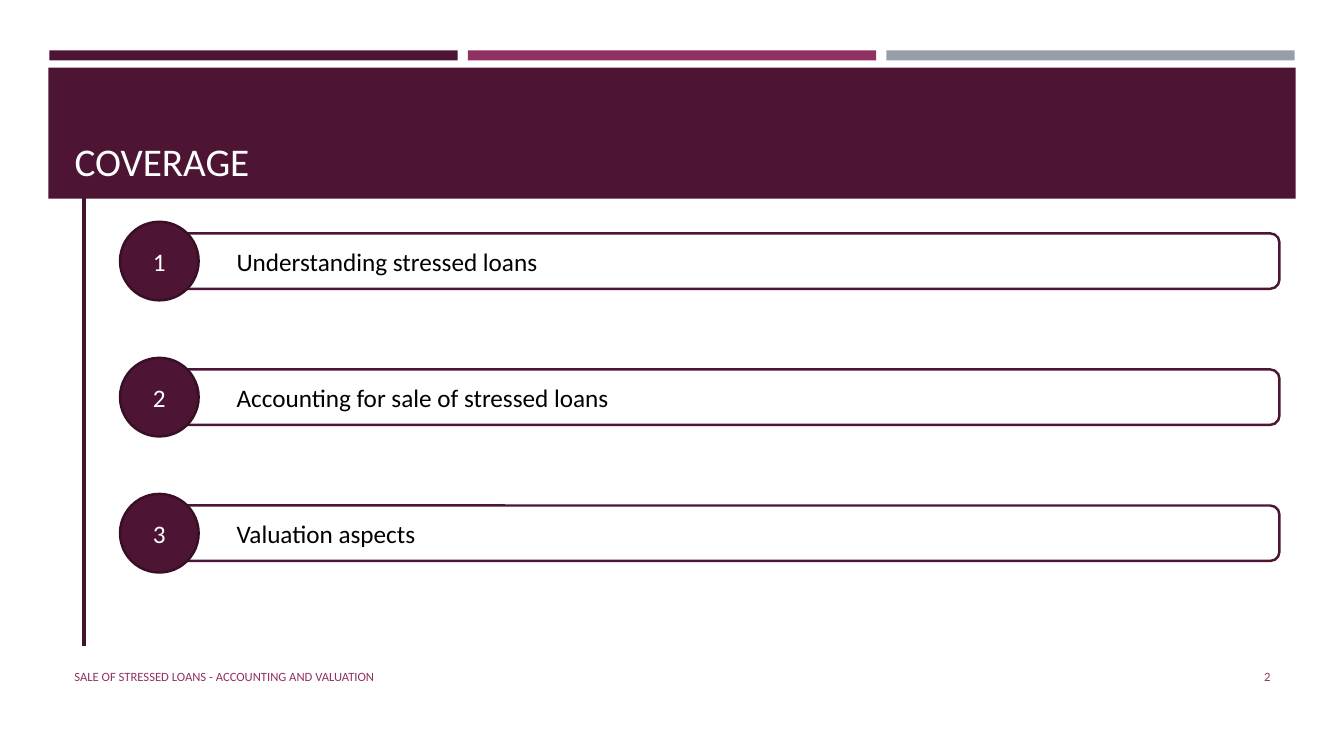
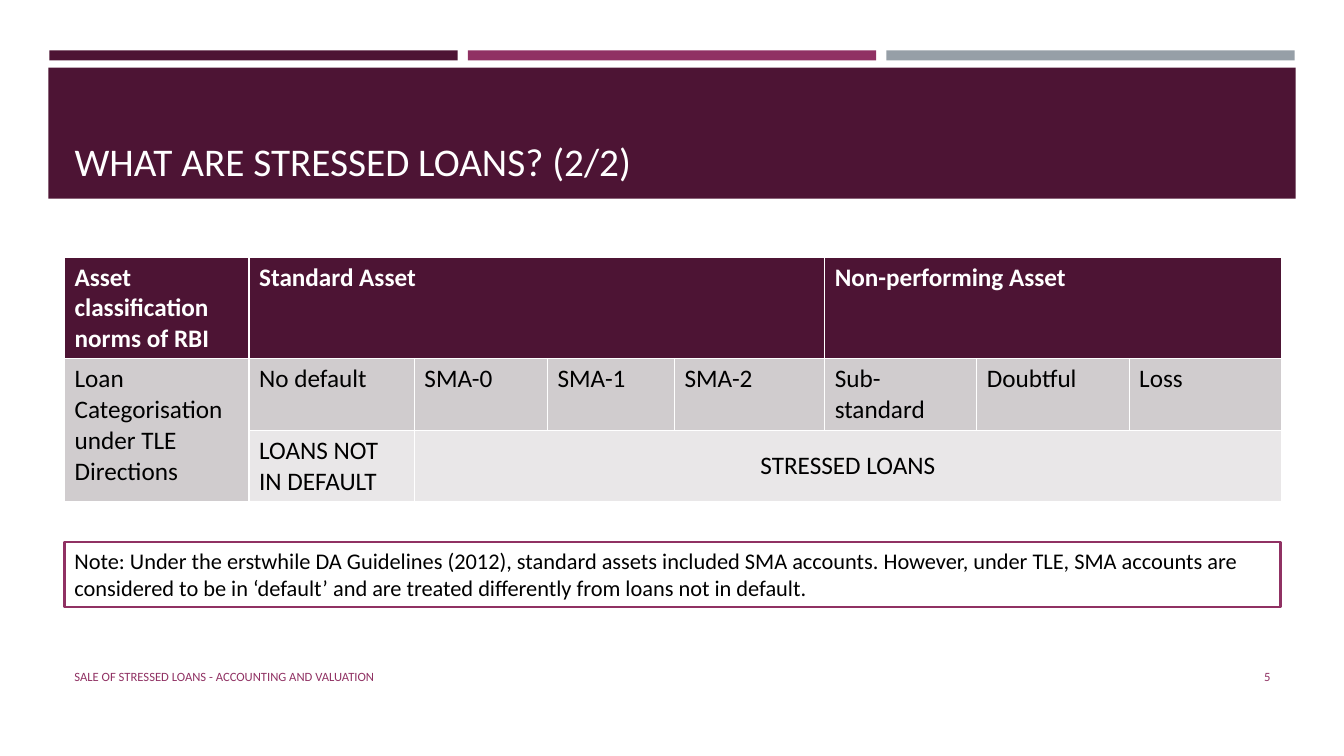
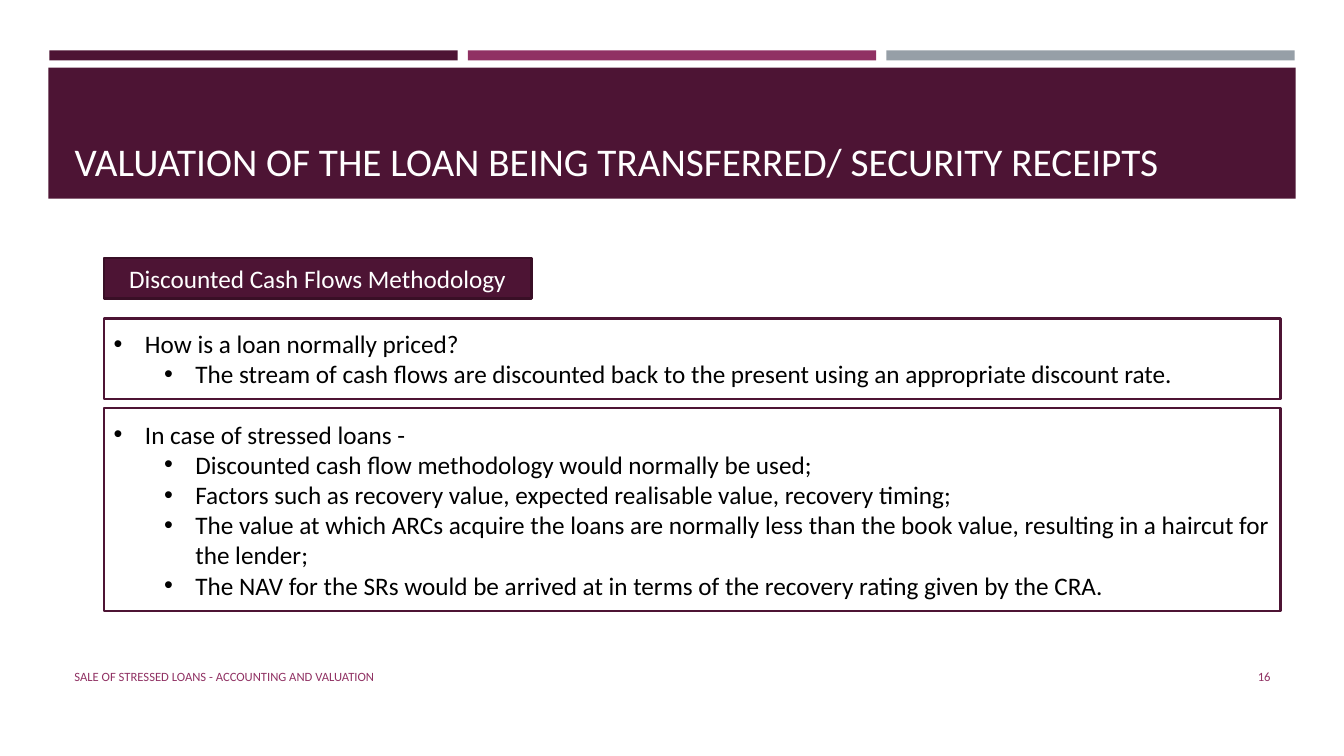
from lxml import etree
from pptx import Presentation
from pptx.dml.color import RGBColor
from pptx.enum import shapes, text
from pptx.oxml import ns
from pptx.util import Inches, Pt

# Colours and font
PLUM = RGBColor(0x4D, 0x14, 0x34)
EDGE = RGBColor(0x39, 0x0F, 0x26)
RAIL = RGBColor(0x45, 0x12, 0x2F)
ROSE = RGBColor(0x90, 0x31, 0x63)
GREY = RGBColor(0x96, 0x9F, 0xA7)
MID = RGBColor(0xD0, 0xCC, 0xCE)
PALE = RGBColor(0xE9, 0xE7, 0xE8)
WHITE = RGBColor(255, 255, 255)
BLACK = RGBColor(0, 0, 0)
FONT = "Calibri"

# Shared geometry, in inches
LEFT, WIDE = 0.64, 12.06
RIGHT = LEFT + WIDE

# Content
FOOT = "SALE OF STRESSED LOANS - ACCOUNTING AND VALUATION"
TOPICS = ["Understanding stressed loans",
          "Accounting for sale of stressed loans",
          "Valuation aspects"]
COLS = [1.83, 1.64, 1.32, 1.26, 1.49, 1.51, 1.51, 1.51]
ROWS = [1.01, 0.71, 0.71]
# row, column, rows spanned, columns spanned, text
CELLS = [
    (0, 0, 1, 1, "Asset classification norms of RBI"),
    (0, 1, 1, 4, "Standard Asset"),
    (0, 5, 1, 3, "Non-performing Asset"),
    (1, 0, 2, 1, "Loan Categorisation under TLE Directions"),
    (1, 1, 1, 1, "No default"),
    (1, 2, 1, 1, "SMA-0"),
    (1, 3, 1, 1, "SMA-1"),
    (1, 4, 1, 1, "SMA-2"),
    (1, 5, 1, 1, "Sub-standard"),
    (1, 6, 1, 1, "Doubtful"),
    (1, 7, 1, 1, "Loss"),
    (2, 1, 1, 1, "LOANS NOT IN DEFAULT"),
    (2, 2, 1, 6, "STRESSED LOANS"),
]
NOTE = ("Note: Under the erstwhile DA Guidelines (2012), standard assets "
        "included SMA accounts. However, under TLE, SMA accounts are "
        "considered to be in ‘default’ and are treated differently from "
        "loans not in default.")
METHOD = "Discounted Cash Flows Methodology"
# top, height, lead line, sub-points
PANELS = [
    (3.16, 0.8, "How is a loan normally priced?",
     ["The stream of cash flows are discounted back to the present using "
      "an appropriate discount rate."]),
    (4.05, 2.01, "In case of stressed loans -",
     ["Discounted cash flow methodology would normally be used;",
      "Factors such as recovery value, expected realisable value, recovery "
      "timing;",
      "The value at which ARCs acquire the loans are normally less than the "
      "book value, resulting in a haircut for the lender;",
      "The NAV for the SRs would be arrived at in terms of the recovery "
      "rating given by the CRA."]),
]

ALIGN = {"l": text.PP_ALIGN.LEFT, "c": text.PP_ALIGN.CENTER,
         "r": text.PP_ALIGN.RIGHT}
ANCHOR = {"t": text.MSO_ANCHOR.TOP, "m": text.MSO_ANCHOR.MIDDLE,
          "b": text.MSO_ANCHOR.BOTTOM}


def write(frame, lines, size=18, color=BLACK, align="l", anchor="m",
          bold=False):
    """Fill a text frame, one paragraph per line."""
    frame.word_wrap = True
    frame.vertical_anchor = ANCHOR[anchor]
    look = {"name": FONT, "size": Pt(size), "bold": bold}
    for i, line in enumerate(lines):
        para = frame.paragraphs[0] if i == 0 else frame.add_paragraph()
        para.alignment = ALIGN[align]
        run = para.add_run()
        run.text = line
        for key, val in look.items():
            setattr(run.font, key, val)
        run.font.color.rgb = color


def box(slide, at, fill, line=None, kind="RECTANGLE"):
    shape = slide.shapes.add_shape(getattr(shapes.MSO_SHAPE, kind),
                                   *map(Inches, at))
    shape.shadow.inherit = False
    shape.fill.solid()
    shape.fill.fore_color.rgb = fill
    if line is None:
        shape.line.fill.background()
    else:
        shape.line.color.rgb = line
        shape.line.width = Pt(1.75)
    return shape


def label(slide, at, words, **look):
    frame = slide.shapes.add_textbox(*map(Inches, at)).text_frame
    write(frame, [words], **look)


def bullet(para, left):
    props = para._p.get_or_add_pPr()
    props.set("marL", str(Inches(left)))
    props.set("indent", str(-Inches(0.31)))
    etree.SubElement(props, ns.qn("a:buFont"), typeface="Arial")
    etree.SubElement(props, ns.qn("a:buChar"), char="•")


def bands(slide, layout):
    """Draw the top bands once and hand them to the layout."""
    parts = [box(slide, (0.48, 0.67, 12.37, 1.3), PLUM)]
    for i, color in enumerate([PLUM, ROSE, GREY]):
        parts.append(box(slide, (0.49 + 4.15 * i, 0.5, 4.05, 0.1), color))
    for i, part in enumerate(parts):
        layout.shapes._spTree.insert(2 + i, part._element)


def start(deck, title, page):
    slide = deck.slides.add_slide(deck.slide_layouts[5])
    head = slide.shapes.title
    spot = {"left": LEFT, "top": 0.77, "width": WIDE, "height": 1.11}
    for key, val in spot.items():
        setattr(head, key, Inches(val))
    write(head.text_frame, [title], size=28, color=WHITE, anchor="b")
    head.text_frame.auto_size = text.MSO_AUTO_SIZE.NONE
    label(slide, (LEFT, 6.51, 7.56, 0.4), FOOT, size=9, color=ROSE)
    label(slide, (RIGHT - 1.15, 6.51, 1.15, 0.4), str(page), size=9,
          color=ROSE, align="r")
    return slide


def cover(slide):
    # Rail down the left side
    rail = slide.shapes.add_connector(
        shapes.MSO_CONNECTOR.STRAIGHT,
        *map(Inches, (0.83, 1.96, 0.83, 6.41)))
    rail.line.color.rgb = RAIL
    rail.line.width = Pt(3)
    etree.SubElement(rail._element.spPr, ns.qn("a:effectLst"))
    # Numbered bars
    for i, topic in enumerate(TOPICS):
        mid = 2.59 + 1.35 * i
        bar = box(slide, (1.72, mid - 0.275, 10.97, 0.55), WHITE, PLUM,
                  "ROUNDED_RECTANGLE")
        bar.text_frame.margin_left = Inches(0.6)
        write(bar.text_frame, [topic])
        disc = box(slide, (1.19, mid - 0.39, 0.78, 0.78), PLUM, EDGE, "OVAL")
        write(disc.text_frame, [str(i + 1)], color=WHITE, align="c")


def classes(slide):
    # Classification table
    grid = slide.shapes.add_table(
        len(ROWS), len(COLS),
        *map(Inches, (LEFT, 2.55, WIDE, sum(ROWS)))).table
    for col, width in zip(grid.columns, COLS):
        col.width = Inches(width)
    for row, height, fill in zip(grid.rows, ROWS, [PLUM, MID, PALE]):
        row.height = Inches(height)
        for cell in row.cells:
            cell.fill.solid()
            cell.fill.fore_color.rgb = fill
    for r, c, down, over, words in CELLS:
        cell = grid.cell(r, c)
        if down * over > 1:
            cell.merge(grid.cell(r + down - 1, c + over - 1))
        last = r == 2 and over > 1
        write(cell.text_frame, [words], color=BLACK if r else WHITE,
              align="c" if last else "l", bold=r == 0)
        cell.vertical_anchor = ANCHOR["m" if last else "t"]
    # Note
    note = box(slide, (LEFT, 5.38, WIDE, 0.64), WHITE, ROSE)
    write(note.text_frame, [NOTE], size=16, anchor="t")


def value(slide):
    left = 1.03
    tag = box(slide, (left, 2.56, 4.24, 0.4), PLUM, EDGE)
    write(tag.text_frame, [METHOD], color=WHITE, align="c")
    # Bulleted panels
    for top, high, lead, subs in PANELS:
        frame = box(slide, (left, top, RIGHT - left, high), WHITE,
                    PLUM).text_frame
        write(frame, [lead] + subs)
        for i, para in enumerate(frame.paragraphs):
            para.level = min(i, 1)
            bullet(para, 0.81 if i else 0.31)


SLIDES = [
    ("COVERAGE", 2, cover),
    ("WHAT ARE STRESSED LOANS? (2/2)", 5, classes),
    ("VALUATION OF THE LOAN BEING TRANSFERRED/ SECURITY RECEIPTS", 16, value),
]


def main():
    deck = Presentation()
    deck.slide_width, deck.slide_height = Inches(13.33), Inches(7.5)
    for i, (title, page, draw) in enumerate(SLIDES):
        slide = start(deck, title, page)
        if i == 0:
            bands(slide, slide.slide_layout)
        draw(slide)
    deck.save("out.pptx")


if __name__ == "__main__":
    main()
